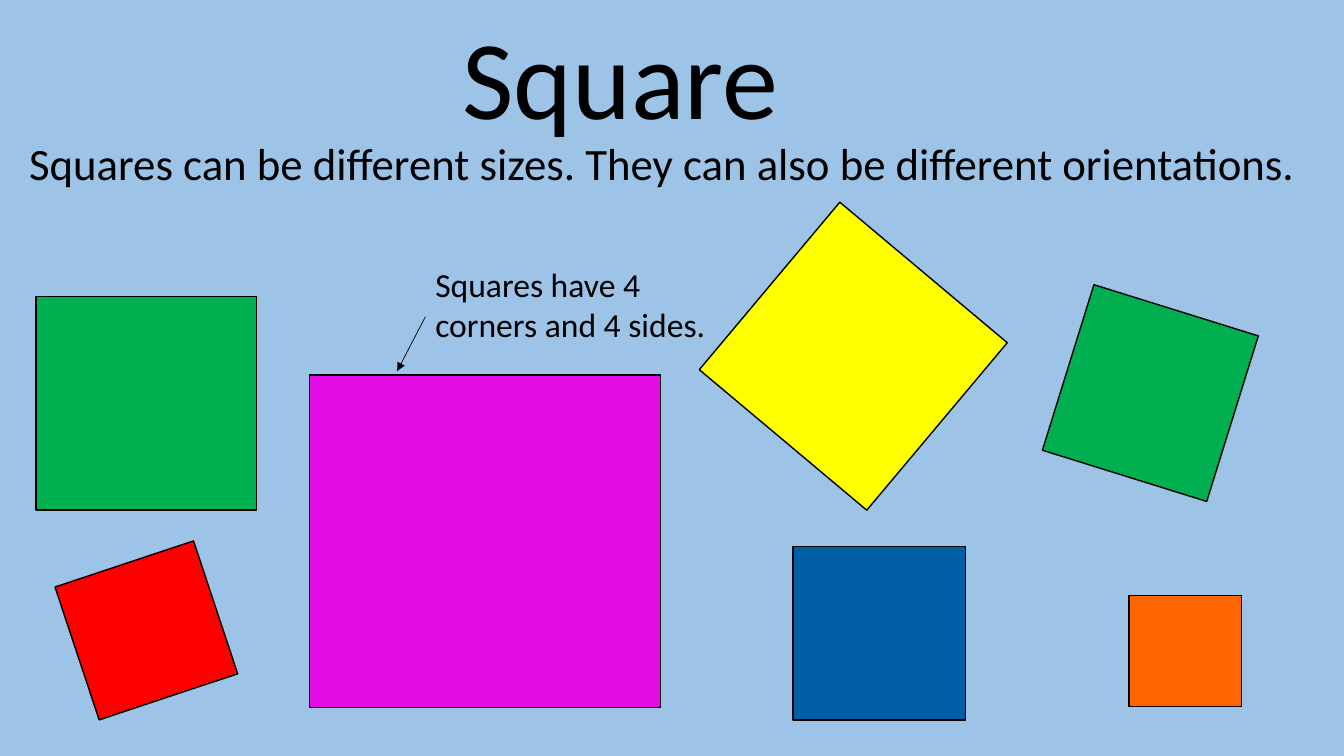
"""Build a slide that shows squares of different sizes and orientations."""
from pptx import Presentation
from pptx.dml.color import RGBColor
from pptx.enum.dml import MSO_LINE
from pptx.enum.shapes import MSO_CONNECTOR, MSO_SHAPE
from pptx.enum.text import MSO_ANCHOR, MSO_AUTO_SIZE, PP_ALIGN
from pptx.oxml.ns import qn
from pptx.util import Cm, Pt
from lxml import etree

RECTANGLE = MSO_SHAPE.RECTANGLE
STRAIGHT = MSO_CONNECTOR.STRAIGHT
SOLID = MSO_LINE.SOLID
TOP = MSO_ANCHOR.TOP
NO_AUTOFIT = MSO_AUTO_SIZE.NONE
LEFT = PP_ALIGN.LEFT
CENTER = PP_ALIGN.CENTER

BLACK = RGBColor(0x00, 0x00, 0x00)
SKY = RGBColor(0x9D, 0xC3, 0xE6)
GREEN = RGBColor(0x00, 0xB0, 0x50)
MAGENTA = RGBColor(0xE4, 0x0C, 0xE4)
YELLOW = RGBColor(0xFF, 0xFF, 0x00)
RED = RGBColor(0xFF, 0x00, 0x00)
ORANGE = RGBColor(0xFF, 0x66, 0x00)
BLUE = RGBColor(0x00, 0x5E, 0xA4)


def write_text(shape, text, size, align=LEFT, wrap=True):
    frame = shape.text_frame
    frame.auto_size = NO_AUTOFIT
    frame.word_wrap = wrap
    frame.vertical_anchor = TOP
    paragraph = frame.paragraphs[0]
    paragraph.alignment = align
    paragraph.space_before = Pt(0)
    run = paragraph.add_run()
    run.text = text
    run.font.name = "Calibri"
    run.font.size = Pt(size)
    run.font.color.rgb = BLACK
    return paragraph


presentation = Presentation()
presentation.slide_width = Cm(33.87)
presentation.slide_height = Cm(19.05)
slide = presentation.slides.add_slide(presentation.slide_layouts[1])
slide.background.fill.solid()
slide.background.fill.fore_color.rgb = SKY

title = slide.shapes.title
title.left, title.top, title.width, title.height = Cm(11.35), Cm(0.05), Cm(8.56), Cm(3.68)
write_text(title, "Square", size=80, align=CENTER, wrap=False)

body = slide.placeholders[1]
body.left, body.top, body.width, body.height = Cm(0.48), Cm(3.3), Cm(34.98), Cm(1.63)
sentence = write_text(
    body,
    "Squares can be different sizes. They can also be different orientations.",
    size=32,
)
sentence_properties = sentence._p.get_or_add_pPr()
sentence_properties.set("marL", "0")
sentence_properties.set("indent", "0")
etree.SubElement(sentence_properties, qn("a:buNone"))

squares = [
    (0.91, 7.47, 5.56, 5.38, 0, GREEN),
    (7.8, 9.45, 8.84, 8.38, 0, MAGENTA),
    (18.75, 6.22, 5.51, 5.51, 310, YELLOW),
    (1.85, 14.12, 3.68, 3.53, 341.6, RED),
    (28.45, 15.01, 2.84, 2.79, 0, ORANGE),
    (19.99, 13.77, 4.34, 4.37, 0, BLUE),
    (26.82, 7.72, 4.34, 4.37, 17.3, GREEN),
]
for left, top, width, height, rotation, color in squares:
    square = slide.shapes.add_shape(RECTANGLE, Cm(left), Cm(top), Cm(width), Cm(height))
    square.rotation = rotation
    square.shadow.inherit = False
    square.fill.solid()
    square.fill.fore_color.rgb = color
    square.line.color.rgb = BLACK
    square.line.width = Pt(1)

arrow = slide.shapes.add_connector(STRAIGHT, Cm(10.72), Cm(7.98), Cm(10.01), Cm(9.35))
arrow.line.color.rgb = BLACK
arrow.line.width = Pt(0.5)
arrow.line.dash_style = SOLID
arrow_line = arrow.line._get_or_add_ln()
etree.SubElement(arrow_line, qn("a:tailEnd"), type="triangle")
etree.SubElement(arrow._element.spPr, qn("a:effectLst"))

note = slide.shapes.add_textbox(Cm(10.72), Cm(6.53), Cm(7.62), Cm(2.31))
write_text(note, "Squares have 4 corners and 4 sides.", size=24)

presentation.save("out.pptx")
